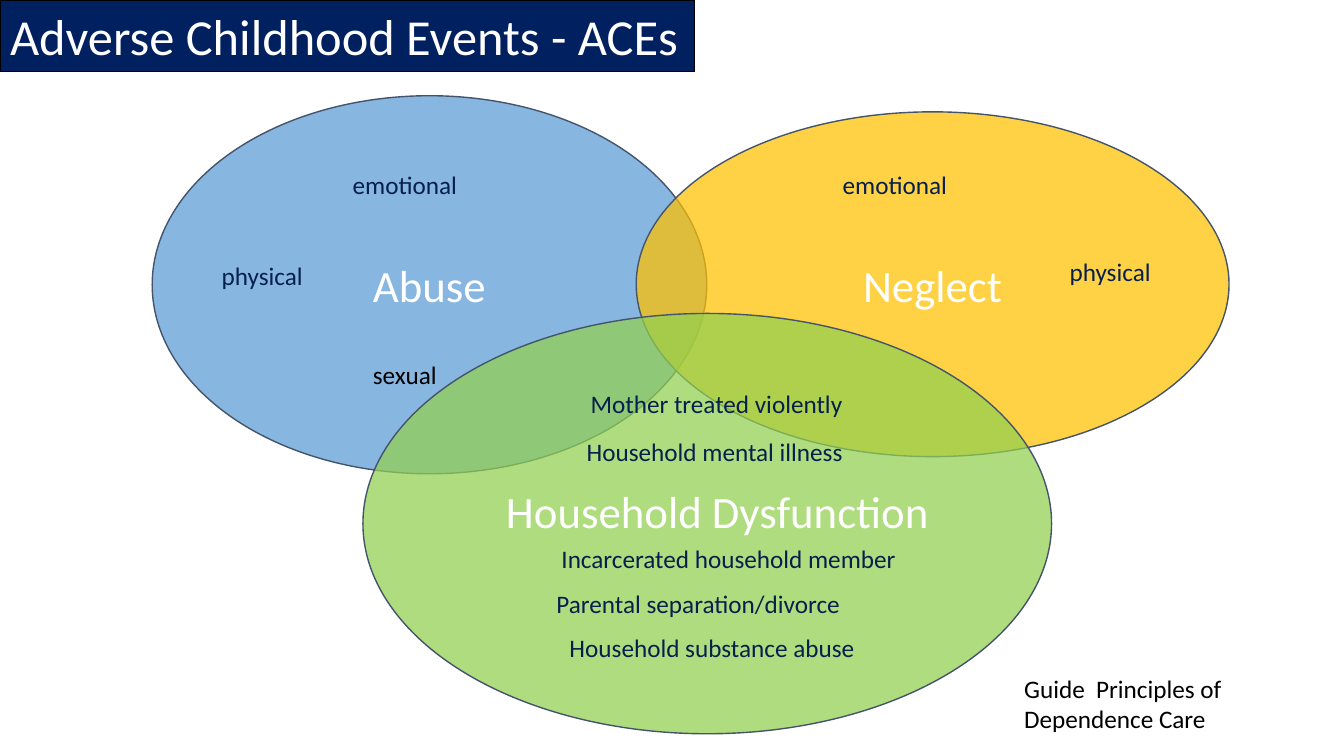
"""Build the Adverse Childhood Events Venn diagram slide."""
from lxml import etree
from pptx import Presentation
from pptx.dml.color import RGBColor
from pptx.enum.shapes import MSO_SHAPE
from pptx.enum.text import MSO_ANCHOR, MSO_AUTO_SIZE, PP_ALIGN
from pptx.oxml.ns import qn
from pptx.util import Inches, Pt

ELLIPSE = MSO_SHAPE.OVAL
MIDDLE = MSO_ANCHOR.MIDDLE
LEFT, CENTER = PP_ALIGN.LEFT, PP_ALIGN.CENTER
NO_FIT, GROW = MSO_AUTO_SIZE.NONE, MSO_AUTO_SIZE.SHAPE_TO_FIT_TEXT

WHITE = RGBColor(0xFF, 0xFF, 0xFF)
BLACK = RGBColor(0x00, 0x00, 0x00)
NAVY = RGBColor(0x00, 0x20, 0x60)
INK = RGBColor(0x06, 0x20, 0x4C)
SLATE = RGBColor(0x44, 0x54, 0x6A)
BLUE = RGBColor(0x5B, 0x9B, 0xD5)
AMBER = RGBColor(0xFF, 0xC0, 0x00)
GREEN = RGBColor(0x92, 0xD0, 0x50)


def write(shape, text, size, color, align=LEFT):
    paragraph = shape.text_frame.paragraphs[0]
    paragraph.alignment = align
    run = paragraph.add_run()
    run.text = text
    run.font.name = "Calibri"
    run.font.size = Pt(size)
    run.font.color.rgb = color


def add_label(text, left, top, width, height, size, color, wrap):
    box = slide.shapes.add_textbox(Inches(left), Inches(top), Inches(width), Inches(height))
    box.text_frame.word_wrap = wrap
    box.text_frame.auto_size = GROW
    write(box, text, size, color)


presentation = Presentation()
presentation.slide_width = Inches(13.33)
presentation.slide_height = Inches(7.5)
slide = presentation.slides.add_slide(presentation.slide_layouts[5])

title = slide.shapes.title
title.left, title.top = Inches(0), Inches(0)
title.width, title.height = Inches(6.89), Inches(0.71)
title.fill.solid()
title.fill.fore_color.rgb = NAVY
title.line.color.rgb = BLACK
title.line.width = Pt(1)
title.text_frame.word_wrap = False
title.text_frame.auto_size = NO_FIT
title.text_frame.vertical_anchor = MIDDLE
write(title, "Adverse Childhood Events - ACEs", 36, WHITE)

circles = [
    ("Abuse", 1.51, 0.95, 5.5, 3.75, BLUE),
    ("Neglect", 6.31, 1.11, 5.88, 3.42, AMBER),
    ("", 3.6, 3.11, 6.83, 4.17, GREEN),
]
for name, left, top, width, height, color in circles:
    ellipse = slide.shapes.add_shape(
        ELLIPSE, Inches(left), Inches(top), Inches(width), Inches(height))
    ellipse.shadow.inherit = False
    ellipse.fill.solid()
    ellipse.fill.fore_color.rgb = color
    fill_color = ellipse.fill._xPr.find(qn("a:solidFill"))[0]
    etree.SubElement(fill_color, qn("a:alpha"), val="73000")
    ellipse.line.color.rgb = SLATE
    ellipse.line.width = Pt(1)
    ellipse.text_frame.vertical_anchor = MIDDLE
    if name:
        write(ellipse, name, 32, WHITE, CENTER)

experiences = [
    ("emotional", 3.4, 1.63, 1.27, INK),
    ("physical", 2.1, 2.53, 1.04, INK),
    ("sexual", 3.6, 3.52, 0.86, BLACK),
    ("emotional", 8.26, 1.63, 1.27, INK),
    ("physical", 10.51, 2.49, 1.04, INK),
    ("Mother treated violently", 5.76, 3.8, 2.73, INK),
    ("Household mental illness", 5.72, 4.28, 2.8, INK),
    ("Incarcerated household member", 5.47, 5.34, 3.59, INK),
    ("Parental separation/divorce", 5.42, 5.79, 3.08, INK),
    ("Household substance abuse", 5.55, 6.22, 3.1, INK),
]
for text, left, top, width, color in experiences:
    add_label(text, left, top, width, 0.4, 18, color, False)

add_label("Household Dysfunction", 4.92, 4.75, 4.59, 0.64, 32, WHITE, True)
add_label("Guide  Principles of Dependence Care", 10.06, 6.63, 3.27, 0.71, 18, BLACK, True)

presentation.save("out.pptx")
